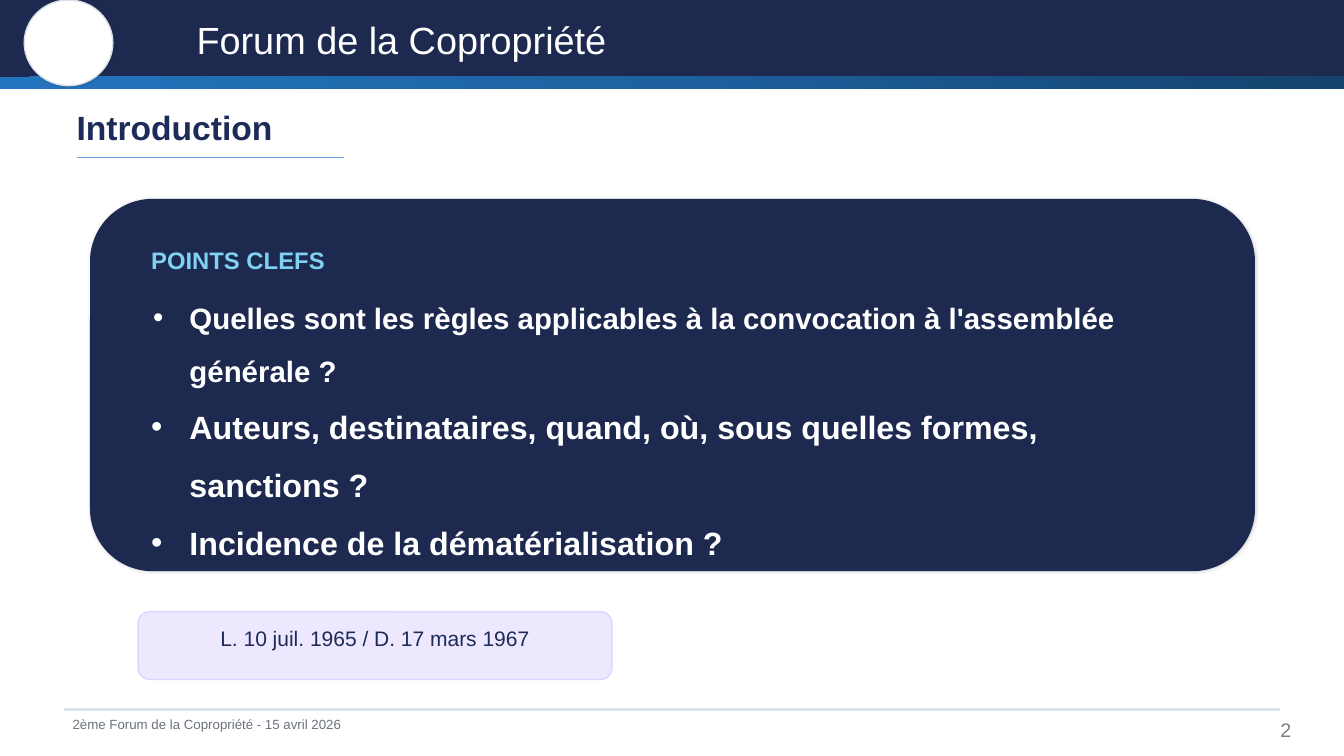
from lxml.etree import SubElement
from pptx import Presentation
from pptx.dml.color import RGBColor
from pptx.enum.shapes import MSO_CONNECTOR, MSO_SHAPE
from pptx.enum.text import MSO_ANCHOR, PP_ALIGN
from pptx.oxml import parse_xml
from pptx.oxml.ns import nsdecls, qn
from pptx.util import Inches, Pt

COLORS = {
    "white": "FFFFFF", "navy": "1D294E", "ink": "1D2B58", "rule": "DCE3F0",
    "footer": "6B7280", "number": "7F7F7F", "ring": "D7DCE8", "underline": "6EA7E8",
    "cyan": "80D2F3", "lilac": "EEE8FF", "lilac_edge": "DDD4FF",
    "deep": "14436D", "mid": "1D619F", "bright": "2375BF",
}
COLUMNS, ROWS = 80, 45


class ForumSlide:
    font = "Arial"

    def __init__(self, prs):
        self.s = prs.slides.add_slide(prs.slide_layouts[6])
        self.col = prs.slide_width / COLUMNS
        self.row = prs.slide_height / ROWS

    def place(self, x, y, w, h):
        return [round(v * u) for v, u in zip((x, y, w, h), (self.col, self.row) * 2)]

    def color(self, name):
        return RGBColor.from_string(COLORS[name])

    def shape(self, kind, at, fill, edge=None, shadow=None):
        sp = self.s.shapes.add_shape(kind, *self.place(*at))
        sp.shadow.inherit = False
        sp.fill.solid()
        sp.fill.fore_color.rgb = self.color(fill)
        if edge:
            sp.line.color.rgb = self.color(edge)
            sp.line.width = Pt(1)
        else:
            sp.line.fill.background()
        if shadow:
            alpha, blur, distance = shadow
            effects = sp._element.spPr.find(qn("a:effectLst"))
            effects.append(parse_xml(
                f'<a:outerShdw {nsdecls("a")} blurRad="{Pt(blur)}" dist="{Pt(distance)}" '
                f'dir="2700000" algn="ctr" rotWithShape="0"><a:srgbClr val="000000">'
                f'<a:alpha val="{alpha * 1000}"/></a:srgbClr></a:outerShdw>'))
        return sp

    def gradient_band(self, at, stops):
        sp = self.shape(MSO_SHAPE.RECTANGLE, at, stops[0])
        step = 100000 // (len(stops) - 1)
        marks = "".join(f'<a:gs pos="{i * step}"><a:srgbClr val="{COLORS[c]}"/></a:gs>'
                        for i, c in enumerate(stops))
        spPr = sp._element.spPr
        spPr.replace(spPr.find(qn("a:solidFill")), parse_xml(
            f'<a:gradFill {nsdecls("a")} rotWithShape="1"><a:gsLst>{marks}</a:gsLst>'
            '<a:path path="circle"><a:fillToRect l="100000" b="100000"/></a:path></a:gradFill>'))

    def line(self, x, y, length, color):
        left, top, width, _ = self.place(x, y, length, 0)
        cx = self.s.shapes.add_connector(MSO_CONNECTOR.STRAIGHT, left, top, left + width, top)
        cx.line.color.rgb = self.color(color)
        cx.line.width = Pt(1)
        SubElement(cx._element.spPr, qn("a:effectLst"))

    def frame(self, at, anchor=MSO_ANCHOR.MIDDLE, margins=(0, 0, 0, 0)):
        tf = self.s.shapes.add_textbox(*self.place(*at)).text_frame
        tf.word_wrap = True
        tf.vertical_anchor = anchor
        tf.margin_left, tf.margin_top, tf.margin_right, tf.margin_bottom = map(Inches, margins)
        return tf

    def style(self, p, size, color, bold=False):
        for r in p.runs:
            r.font.name = self.font
            r.font.size = Pt(size)
            r.font.bold = bold
            r.font.color.rgb = self.color(color)

    def text(self, at, text, size, color, bold=False, align=PP_ALIGN.LEFT, **box):
        tf = self.frame(at, **box)
        tf.text = text
        p = tf.paragraphs[0]
        p.alignment = align
        self.style(p, size, color, bold)

    def bullets(self, at, items, color, **box):
        tf = self.frame(at, **box)
        tf.text = "\n".join(text for text, _, _ in items)
        for p, (_, size, hang) in zip(tf.paragraphs, items):
            pPr = p._p.get_or_add_pPr()
            pPr.set("marL", str(Inches(0.38)))
            pPr.set("indent", str(-Inches(hang)))
            SubElement(SubElement(pPr, qn("a:buClr")), qn("a:srgbClr"), val=COLORS[color])
            SubElement(pPr, qn("a:buFont"), typeface=self.font)
            SubElement(pPr, qn("a:buChar"), char="•")
            p.line_spacing = 1.5
            self.style(p, size, color, True)


def main():
    prs = Presentation()
    prs.slide_width, prs.slide_height = Inches(13.33), Inches(7.5)
    forum = ForumSlide(prs)

    forum.text((75.62, 42.42, 4.98, 2.04), "2", 14, "number",
               anchor=MSO_ANCHOR.TOP, margins=(0.1, 0.05, 0.1, 0.05))
    forum.shape(MSO_SHAPE.RECTANGLE, (0, 0, COLUMNS, 4.56), "navy", "navy")
    forum.shape(MSO_SHAPE.RECTANGLE, (3.84, 42.18, 72.32, 0.12), "rule", "rule")
    forum.text((4.32, 42.54, 28.8, 1.08), "2ème Forum de la Copropriété - 15 avril 2026",
               9.5, "footer")
    forum.gradient_band((0, 4.56, COLUMNS, 0.72), ("deep", "mid", "bright"))
    forum.shape(MSO_SHAPE.OVAL, (1.44, 0, 5.28, 5.1), "white", "ring", (15, 1.2, 0.5))
    forum.text((11.7, 1.14, 35.4, 2.4), "Forum de la Copropriété", 27, "white")

    forum.text((4.56, 6.6, 37.8, 1.92), "Introduction", 24, "ink", True)
    forum.line(4.56, 9.36, 15.9, "underline")

    forum.shape(MSO_SHAPE.ROUNDED_RECTANGLE, (5.4, 11.88, 69.26, 22.08),
                "navy", "navy", (16, 1.4, 0.5))
    forum.text((9, 14.88, 13.2, 1.2), "POINTS CLEFS", 17, "cyan", True)
    forum.bullets((9, 20.7, 61.5, 11.1), (
        ("Quelles sont les règles applicables à la convocation à l'assemblée générale ?", 21, 0.36),
        ("Auteurs, destinataires, quand, où, sous quelles formes, sanctions ?", 23, 0.38),
        ("Incidence de la dématérialisation ?", 23, 0.38),
    ), "white", margins=(0, 0, 0, 0.38))

    forum.shape(MSO_SHAPE.ROUNDED_RECTANGLE, (8.22, 36.42, 28.2, 4.02), "lilac", "lilac_edge")
    forum.text((8.7, 36.42, 27.24, 3.18), "L. 10 juil. 1965 / D. 17 mars 1967",
               15, "ink", align=PP_ALIGN.CENTER)

    prs.save("out.pptx")


if __name__ == "__main__":
    main()
